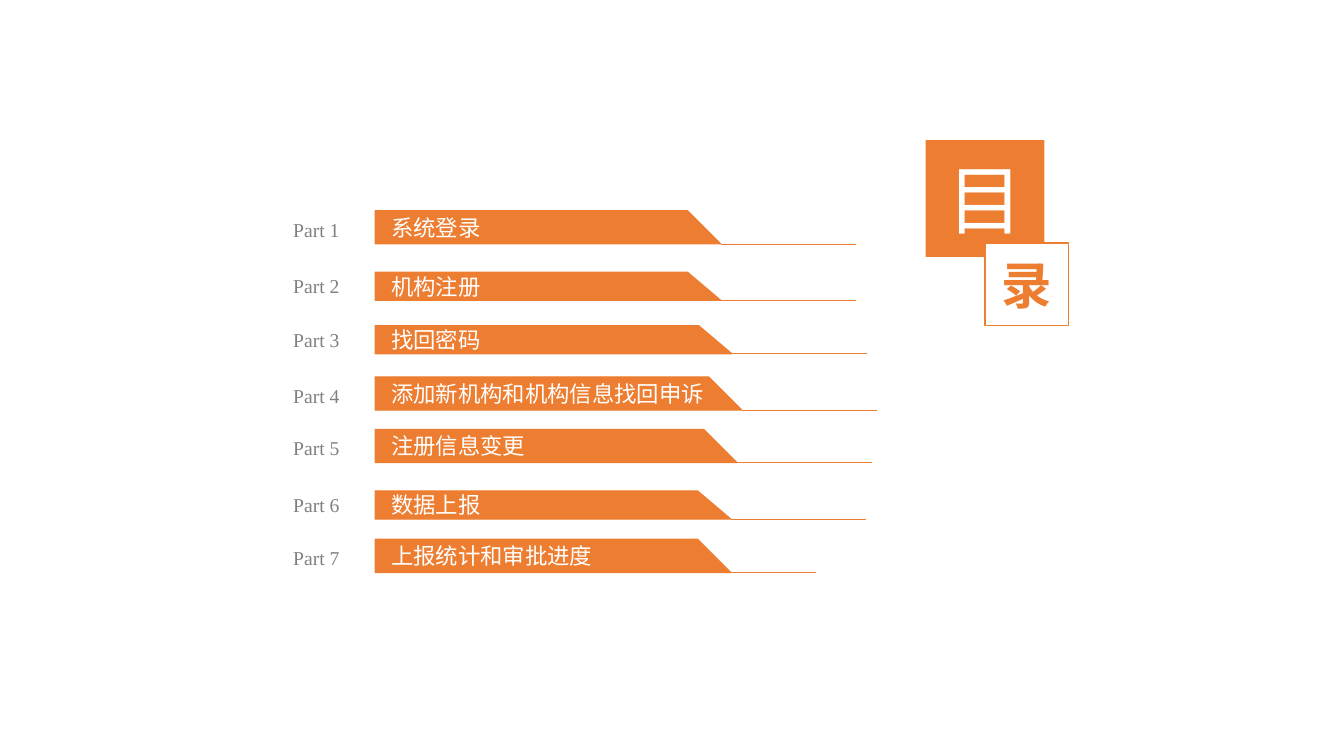
from lxml import etree
from pptx import Presentation
from pptx.dml.color import RGBColor
from pptx.enum.shapes import MSO_CONNECTOR, MSO_SHAPE
from pptx.enum.text import MSO_ANCHOR, PP_ALIGN
from pptx.oxml.ns import qn
from pptx.util import Inches, Pt

RECT = MSO_SHAPE.RECTANGLE
STRAIGHT = MSO_CONNECTOR.STRAIGHT
MIDDLE = MSO_ANCHOR.MIDDLE
LEFT, CENTER = PP_ALIGN.LEFT, PP_ALIGN.CENTER

COLORS = {"orange": "ED7D31", "white": "FFFFFF", "gray": "808080"}
CJK, SERIF = "Noto Sans CJK SC", "Times New Roman"

# title, bar top, bar height, bar width, underline start
PARTS = [
    ("系统登录", 2.09, 0.33, 3.43, 7.15),
    ("机构注册", 2.70, 0.28, 3.43, 7.15),
    ("找回密码", 3.23, 0.28, 3.54, 7.26),
    ("添加新机构和机构信息找回申诉", 3.74, 0.33, 3.64, 7.36),
    ("注册信息变更", 4.26, 0.33, 3.59, 7.31),
    ("数据上报", 4.87, 0.28, 3.53, 7.25),
    ("上报统计和审批进度", 5.35, 0.33, 3.53, 6.75),
]
# character, box, fill, text colour, size, bold
HEADING = [
    ("目", (9.18, 1.39, 1.18, 1.16), "orange", "white", 54, False),
    ("录", (9.77, 2.41, 0.83, 0.82), "white", "orange", 36, True),
]
BAR_LEFT, SLANT, RULE_LENGTH = 3.72, 0.33, 1.34
LABEL_LEFT, LABEL_WIDTH, LABEL_HEIGHT, LABEL_RISE = 2.81, 0.66, 0.37, 0.33


def rgb(name):
    return RGBColor.from_string(COLORS[name])


def style_shape(sp, fill, line_width):
    sp.shadow.inherit = False
    sp.fill.solid()
    sp.fill.fore_color.rgb = rgb(fill)
    sp.line.color.rgb = rgb("orange")
    sp.line.width = Pt(line_width)


def write(sp, text, font, size, color, align=LEFT, bold=False, wrap=True):
    tf = sp.text_frame
    tf.word_wrap = wrap
    tf.vertical_anchor = MIDDLE
    p = tf.paragraphs[0]
    p.alignment = align
    r = p.add_run()
    r.text = text
    r.font.name = font
    r.font.size = Pt(size)
    r.font.bold = bold
    r.font.color.rgb = rgb(color)
    etree.SubElement(r.font._element, qn("a:ea"), typeface=font)


def add_bar(shapes, title, top, height, width):
    right, bottom = BAR_LEFT + width, top + height
    builder = shapes.build_freeform(Inches(BAR_LEFT), Inches(top))
    corners = [(right - SLANT, top), (right, bottom), (BAR_LEFT, bottom)]
    builder.add_line_segments([(Inches(x), Inches(y)) for x, y in corners])
    sp = builder.convert_to_shape()
    style_shape(sp, "orange", 0.75)
    tf = sp.text_frame
    tf.margin_left, tf.margin_right = Inches(0.16), Inches(0.1)
    tf.margin_top = tf.margin_bottom = 0
    write(sp, title, CJK, 16, "white")


def add_rule(shapes, left, y):
    line = shapes.add_connector(STRAIGHT, Inches(left), Inches(y),
                                Inches(left + RULE_LENGTH), Inches(y))
    line.line.color.rgb = rgb("orange")
    line.line.width = Pt(0.5)
    etree.SubElement(line._element.spPr, qn("a:effectLst"))


def main():
    prs = Presentation()
    prs.slide_width, prs.slide_height = Inches(13.33), Inches(7.5)
    shapes = prs.slides.add_slide(prs.slide_layouts[6]).shapes

    for char, box, fill, color, size, bold in HEADING:
        sp = shapes.add_shape(RECT, *map(Inches, box))
        style_shape(sp, fill, 1)
        if fill == "orange":
            sp.line.fill.background()
        write(sp, char, CJK, size, color, CENTER, bold)

    for number, (title, top, height, width, rule_left) in enumerate(PARTS, 1):
        bottom = top + height
        add_bar(shapes, title, top, height, width)
        add_rule(shapes, rule_left, bottom)
        label = shapes.add_textbox(Inches(LABEL_LEFT), Inches(bottom - LABEL_RISE),
                                   Inches(LABEL_WIDTH), Inches(LABEL_HEIGHT))
        write(label, f"Part {number}", SERIF, 14, "gray", wrap=False)

    prs.save("out.pptx")


if __name__ == "__main__":
    main()
